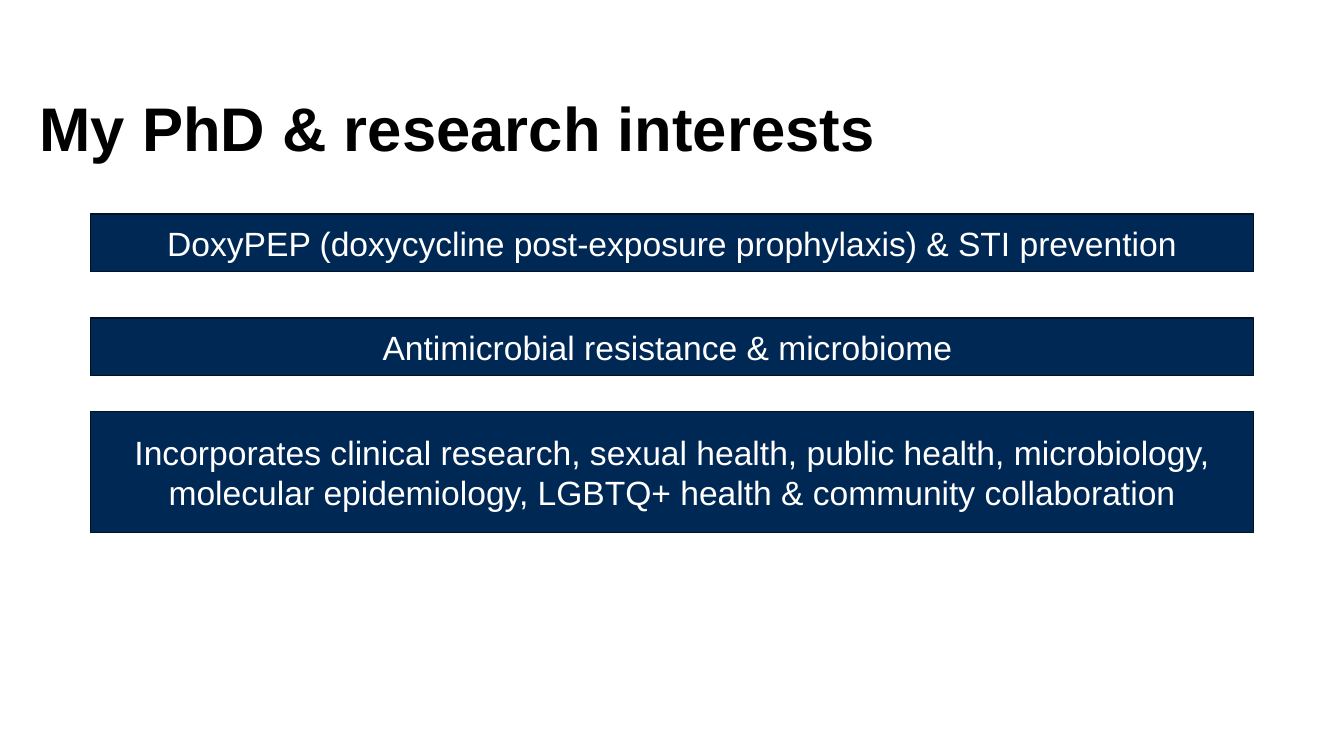
from pptx import Presentation
from pptx.dml.color import RGBColor
from pptx.enum.shapes import MSO_SHAPE
from pptx.enum.text import MSO_ANCHOR, PP_ALIGN
from pptx.util import Cm, Pt

RECTANGLE = MSO_SHAPE.RECTANGLE
MIDDLE = MSO_ANCHOR.MIDDLE
TOP = MSO_ANCHOR.TOP
CENTER = PP_ALIGN.CENTER
COLORS = {"title": "000000", "bar": "002855", "edge": "001225", "text": "FFFFFF"}


def style_font(font, size, color, bold=False):
    font.name = "Arial"
    font.size = Pt(size)
    font.bold = bold
    font.color.rgb = RGBColor.from_string(COLORS[color])


deck = Presentation()
deck.slide_width = Cm(33.87)
deck.slide_height = Cm(19.05)
page = deck.slides.add_slide(deck.slide_layouts[6])

title = page.shapes.add_textbox(Cm(1), Cm(2.49), Cm(25), Cm(3.81))
frame = title.text_frame
frame.word_wrap = True
frame.vertical_anchor = TOP
frame.margin_left = frame.margin_right = frame.margin_top = frame.margin_bottom = 0
frame.text = "My PhD & research interests"
para = frame.paragraphs[0]
para.line_spacing = 0.9
style_font(para.runs[0].font, 44, "title", bold=True)

interests = [
    (5.39, 1.46, "DoxyPEP (doxycycline post-exposure prophylaxis) & STI prevention"),
    (8.01, 1.46, "Antimicrobial resistance & microbiome "),
    (10.37, 3.05, "Incorporates clinical research, sexual health, public health, microbiology, "
                  "molecular epidemiology, LGBTQ+ health & community collaboration"),
]
for top, height, text in interests:
    bar = page.shapes.add_shape(RECTANGLE, Cm(2.28), Cm(top), Cm(29.31), Cm(height))
    bar.shadow.inherit = False
    bar.fill.solid()
    bar.fill.fore_color.rgb = RGBColor.from_string(COLORS["bar"])
    bar.line.color.rgb = RGBColor.from_string(COLORS["edge"])
    bar.line.width = Pt(1)
    frame = bar.text_frame
    frame.word_wrap = True
    frame.vertical_anchor = MIDDLE
    frame.text = text
    para = frame.paragraphs[0]
    para.alignment = CENTER
    style_font(para.runs[0].font, 24, "text")

deck.save("out.pptx")
